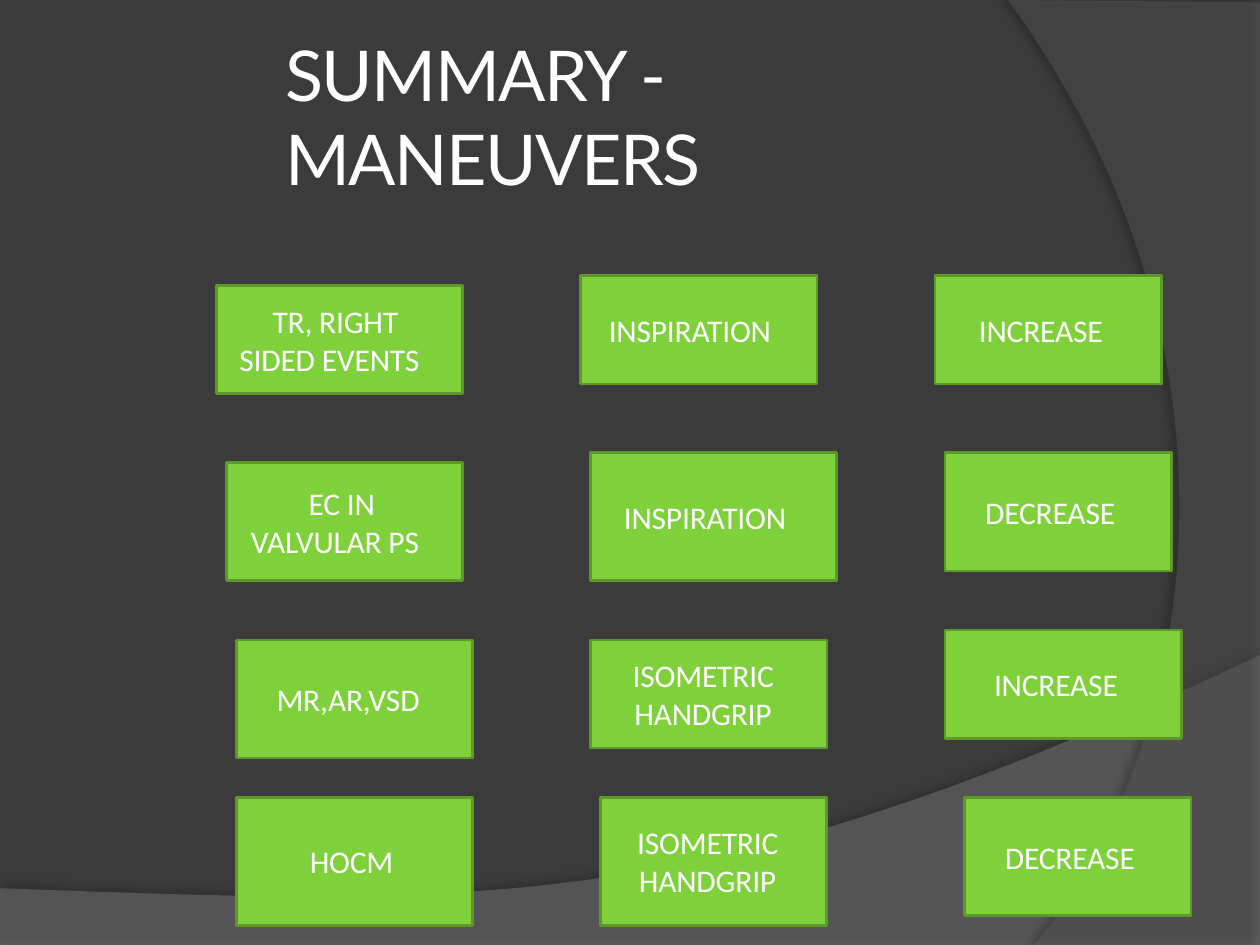
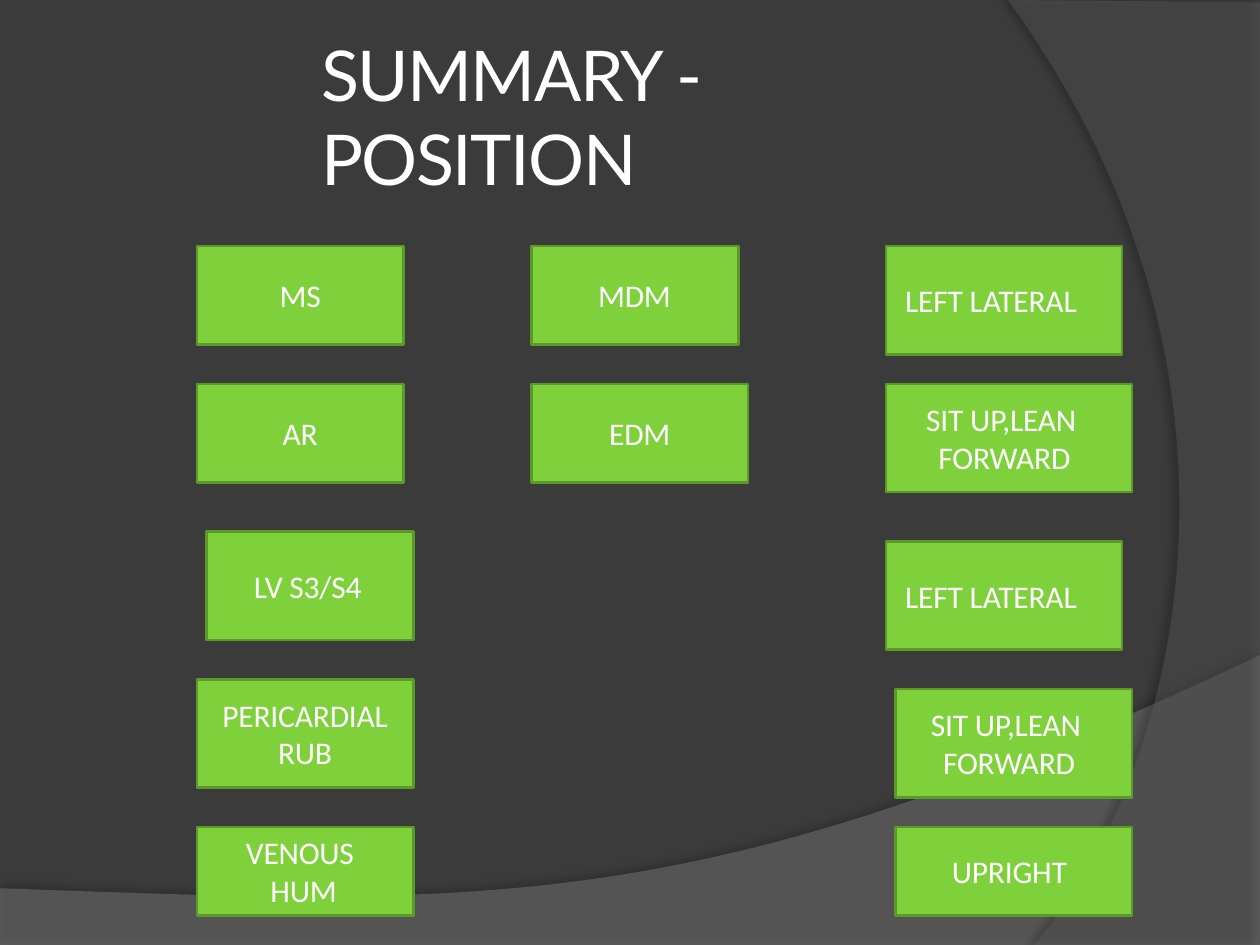
"""Build two heart murmur summary slides."""
from dataclasses import dataclass, field

import lxml.etree
import pptx
import pptx.dml.color
import pptx.enum.shapes
import pptx.enum.text
import pptx.oxml.ns
import pptx.util

Pt = pptx.util.Pt
RGB = pptx.dml.color.RGBColor.from_string
ALIGN = pptx.enum.text.PP_ALIGN
MIDDLE = pptx.enum.text.MSO_ANCHOR.MIDDLE
qn = pptx.oxml.ns.qn

WIDTH, HEIGHT = 720, 540
CELL = WIDTH / 128


@dataclass(frozen=True)
class Theme:
    """Colours and type formats shared by both slides."""
    background: str = "3B3B3B"
    wave: str = "7F7F7F"
    arc: str = "5E5E5E"
    shadow: str = "000000"
    text: str = "FFFFFF"
    box_fill: str = "7ED13A"
    box_line: str = "5C9929"
    box_line_width: float = 1.5
    title: dict = field(default_factory=lambda: {"name": "Lato", "size": Pt(40)})
    label: dict = field(default_factory=lambda: {"name": "Calibri", "size": Pt(18)})
    title_spacing: int = -85
    label_spacing: int = -10


THEME = Theme()
FRAME = {"margin_left": 0, "margin_top": 0, "margin_right": 0, "margin_bottom": 0,
         "word_wrap": True, "vertical_anchor": MIDDLE,
         "auto_size": pptx.enum.text.MSO_AUTO_SIZE.NONE}

# Each box: left, top, width and height in grid cells, then (indent in points, line);
# an indent of None centres the line.
MANEUVERS = [
    (22, 29, 25, 11, [(32, "TR, RIGHT"), (13, "SIDED EVENTS")]),
    (59, 28, 24, 11, [(16, "INSPIRATION")]),
    (95, 28, 23, 11, [(25, "INCREASE")]),
    (23, 47, 24, 12, [(47, "EC IN"), (14, "VALVULAR PS")]),
    (60, 46, 25, 13, [(19, "INSPIRATION")]),
    (96, 46, 23, 12, [(23, "DECREASE")]),
    (24, 65, 24, 12, [(23, "MR,AR,VSD")]),
    (60, 65, 24, 11, [(24, "ISOMETRIC"), (25, "HANDGRIP")]),
    (96, 64, 24, 11, [(28, "INCREASE")]),
    (24, 81, 24, 13, [(42, "HOCM")]),
    (61, 81, 23, 13, [(21, "ISOMETRIC"), (22, "HANDGRIP")]),
    (98, 81, 23, 12, [(23, "DECREASE")]),
]
POSITIONS = [
    (20, 25, 21, 10, [(None, "MS")]),
    (54, 25, 21, 10, [(38, "MDM")]),
    (90, 25, 24, 11, [(11, "LEFT LATERAL")]),
    (20, 39, 21, 10, [(None, "AR")]),
    (54, 39, 22, 10, [(None, "EDM")]),
    (90, 39, 25, 11, [(23, "SIT UP,LEAN"), (30, "FORWARD")]),
    (21, 54, 21, 11, [(27, "LV S3/S4")]),
    (90, 55, 24, 11, [(11, "LEFT LATERAL")]),
    (20, 69, 22, 11, [(None, "PERICARDIAL"), (None, "RUB")]),
    (91, 70, 24, 11, [(20, "SIT UP,LEAN"), (27, "FORWARD")]),
    (20, 84, 22, 9, [(28, "VENOUS"), (42, "HUM")]),
    (91, 84, 24, 9, [(32, "UPRIGHT")]),
]


def apply(obj, formats):
    """Set every attribute named in a dict of format values."""
    for name, value in formats.items():
        setattr(obj, name, value)


def write(p, text, formats, spacing):
    """Add one formatted run to a paragraph."""
    r = p.add_run()
    r.text = text
    apply(r.font, formats)
    r.font.color.rgb = RGB(THEME.text)
    r.font._element.set("spc", str(spacing))


def bezier(p0, p1, p2, p3, steps=60):
    """Return points along a cubic curve."""
    curve = []
    for i in range(steps + 1):
        t = i / steps
        weights = ((1 - t) ** 3, 3 * t * (1 - t) ** 2, 3 * t * t * (1 - t), t ** 3)
        curve.append(tuple(sum(w * q[axis] for w, q in zip(weights, (p0, p1, p2, p3)))
                           for axis in (0, 1)))
    return curve


def add_alpha(color, percent):
    """Make a colour element partly transparent."""
    lxml.etree.SubElement(color, qn("a:alpha"), val=str(percent * 1000))


def add_swoosh(slide, points, color, alpha, shadow_alpha, distance, angle):
    """Draw a translucent outline with a soft shadow."""
    start, *rest = [(Pt(x), Pt(y)) for x, y in points]
    builder = slide.shapes.build_freeform(*start, scale=1.0)
    builder.add_line_segments(rest, close=True)
    sp = builder.convert_to_shape()
    sp.fill.solid()
    sp.fill.fore_color.rgb = RGB(color)
    sp.line.fill.background()
    sp.shadow.inherit = False
    props = sp._element.spPr
    add_alpha(props.find(f".//{qn('a:srgbClr')}"), alpha)
    outer = lxml.etree.SubElement(
        props.find(qn("a:effectLst")), qn("a:outerShdw"), blurRad=str(Pt(4)),
        dist=str(Pt(distance)), dir=str(angle * 60000), rotWithShape="0")
    add_alpha(lxml.etree.SubElement(outer, qn("a:srgbClr"), val=THEME.shadow), shadow_alpha)
    return sp


def add_backdrop(slide, layout):
    """Draw the wave and the arc and move them to the shared layout."""
    wave = [(0, HEIGHT), (WIDTH, HEIGHT)] + bezier(
        (WIDTH, 374.4), (402.5, 524.9), (281.5, 517.7), (0, 507.6))
    arc = [(WIDTH, 1.4), (WIDTH, HEIGHT)] + bezier(
        (591, HEIGHT), (673.2, 445.7), (733, 216), (576, 0))
    swooshes = (add_swoosh(slide, wave, THEME.wave, 45, 35, 3.5, 270),
                add_swoosh(slide, arc, THEME.arc, 40, 45, 4, 180))
    for i, sp in enumerate(swooshes):
        sp._element.nvSpPr.cNvPr.set("id", str(20 + i))
        layout.shapes._spTree.insert(2 + i, sp._element)


def add_title(slide, text, left, top, width, height):
    """Place and format the title placeholder."""
    sp = slide.shapes.title
    apply(sp, {"left": Pt(left), "top": Pt(top), "width": Pt(width), "height": Pt(height)})
    apply(sp.text_frame, FRAME)
    p = sp.text_frame.paragraphs[0]
    apply(p, {"alignment": ALIGN.LEFT, "space_before": Pt(1)})
    write(p, text, THEME.title, THEME.title_spacing)


def add_box(slide, left, top, width, height, lines):
    """Draw one green box with its indented lines."""
    sp = slide.shapes.add_shape(
        pptx.enum.shapes.MSO_SHAPE.RECTANGLE,
        *(Pt(n * CELL) for n in (left, top, width, height)))
    sp.shadow.inherit = False
    sp.fill.solid()
    sp.fill.fore_color.rgb = RGB(THEME.box_fill)
    sp.line.color.rgb = RGB(THEME.box_line)
    sp.line.width = Pt(THEME.box_line_width)
    tf = sp.text_frame
    apply(tf, FRAME)
    for i, (indent, text) in enumerate(lines):
        p = tf.add_paragraph() if i else tf.paragraphs[0]
        p.alignment = ALIGN.CENTER if indent is None else ALIGN.LEFT
        p._p.get_or_add_pPr().set("marL", str(Pt(indent or 0)))
        write(p, text, THEME.label, THEME.label_spacing)


def add_summary(prs, layout, title, left, boxes):
    """Add a summary slide with a title and its boxes."""
    slide = prs.slides.add_slide(layout)
    add_title(slide, title, left, 41, 565 - left, 50)
    for box in boxes:
        add_box(slide, *box)
    return slide


def main():
    """Build and save the presentation."""
    prs = pptx.Presentation()
    apply(prs, {"slide_width": Pt(WIDTH), "slide_height": Pt(HEIGHT)})
    fill = prs.slide_master.background.fill
    fill.solid()
    fill.fore_color.rgb = RGB(THEME.background)
    layout = prs.slide_layouts[5]
    slide = add_summary(prs, layout, "SUMMARY - MANEUVERS", 163, MANEUVERS)
    add_backdrop(slide, layout)
    add_summary(prs, layout, "SUMMARY - POSITION", 183.5, POSITIONS)
    prs.save("out.pptx")


if __name__ == "__main__":
    main()
